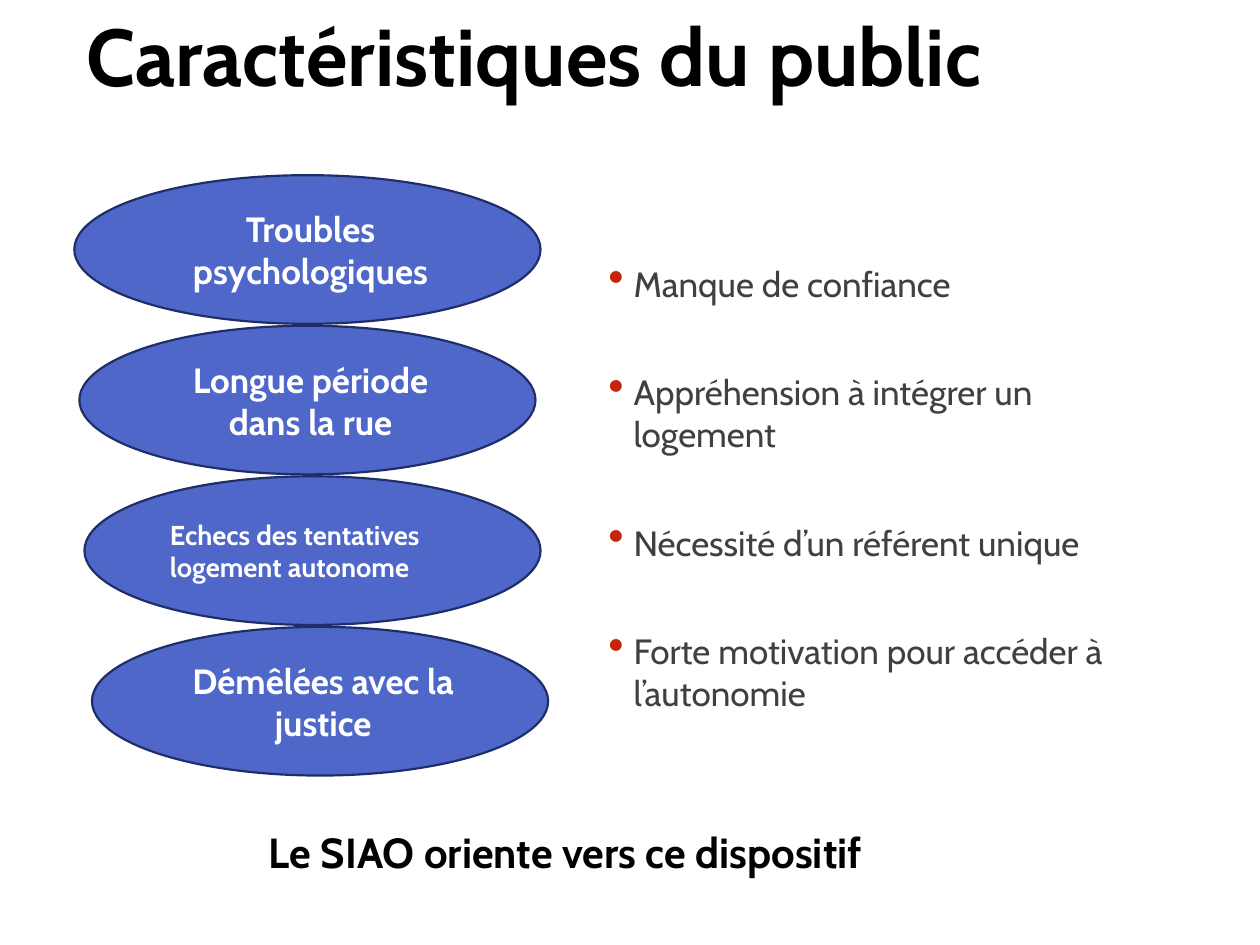
from lxml import etree
from pptx import Presentation
from pptx import util as u
from pptx.dml.color import RGBColor
from pptx.enum import shapes, text
from pptx.oxml.ns import qn

FONT = "Cabin"
DIFFICULTIES = [
    ("Troubles psychologiques", 0.59, 3.7, 20, text.PP_ALIGN.CENTER),
    ("Longue période dans la rue", 0.63, 3.62, 20, text.PP_ALIGN.CENTER),
    ("Echecs des tentatives logement autonome", 0.67, 3.62, 15.6, text.PP_ALIGN.LEFT),
    ("Démêlées avec la justice", 0.73, 3.62, 20, text.PP_ALIGN.CENTER),
]
NEEDS = [
    "Manque de confiance",
    "Appréhension à intégrer un logement",
    "Nécessité d’un référent unique",
    "Forte motivation pour accéder à l’autonomie",
]


def color(hex_value):
    """Turn a hex string into a colour."""
    return RGBColor.from_string(hex_value)


def style(paragraph, size, hex_value, bold=False, align=text.PP_ALIGN.LEFT):
    """Format a paragraph and its runs."""
    paragraph.alignment = align
    for run in paragraph.runs:
        run.font.name = FONT
        run.font.size = u.Pt(size)
        run.font.bold = bold
        run.font.color.rgb = color(hex_value)


def indent(paragraph, left, first=0):
    """Set the left margin and first-line indent in inches."""
    properties = paragraph._p.get_or_add_pPr()
    properties.set("marL", str(u.Inches(left)))
    properties.set("indent", str(u.Inches(first)))
    return properties


def add_text(slide, left, top, width, height):
    """Add a wrapping text box and return its frame."""
    frame = slide.shapes.add_textbox(
        u.Inches(left), u.Inches(top), u.Inches(width), u.Inches(height)).text_frame
    frame.word_wrap = True
    return frame


def add_heading(slide, wording, box, size, align):
    """Add one bold black line of text."""
    heading = add_text(slide, *box).paragraphs[0]
    heading.text = wording
    style(heading, size, "000000", True, align)


def add_bullet(paragraph):
    """Give a paragraph a large red bullet."""
    properties = indent(paragraph, 0.6, -0.2)
    bullet_color = etree.SubElement(properties, qn("a:buClr"))
    etree.SubElement(bullet_color, qn("a:srgbClr"), val="C3260C")
    etree.SubElement(properties, qn("a:buSzPct"), val="130000")
    etree.SubElement(properties, qn("a:buChar"), char="•")


def add_needs(slide):
    """Add the bulleted list of needs."""
    frame = add_text(slide, 4.33, 1.58, 5, 4.8)
    frame.margin_top = u.Inches(0.5)
    for index, wording in enumerate(NEEDS):
        need = frame.paragraphs[0] if index == 0 else frame.add_paragraph()
        need.text = wording
        need.space_before = u.Pt(35 if index else 0)
        need.space_after = u.Pt(3)
        style(need, 20, "404040")
        add_bullet(need)


def add_difficulty(slide, top, wording, left, width, size, align):
    """Add one labelled ellipse."""
    ellipse = slide.shapes.add_shape(
        shapes.MSO_SHAPE.OVAL, u.Inches(left), u.Inches(top), u.Inches(width), u.Inches(1.18))
    ellipse.shadow.inherit = False
    ellipse.fill.solid()
    ellipse.fill.fore_color.rgb = color("4E67C8")
    ellipse.line.color.rgb = color("1F2E69")
    ellipse.line.width = u.Pt(1.25)
    frame = ellipse.text_frame
    frame.word_wrap = True
    frame.vertical_anchor = text.MSO_ANCHOR.MIDDLE
    label = frame.paragraphs[0]
    label.text = wording
    style(label, size, "FFFFFF", True, align)
    indent(label, 0.05)


def main():
    """Build and save the slide."""
    deck = Presentation()
    deck.slide_width, deck.slide_height = u.Inches(10), u.Inches(7.5)
    slide = deck.slides.add_slide(deck.slide_layouts[6])
    add_heading(slide, "Caractéristiques du public", (0.59, 0, 8.26, 0.99), 46,
                text.PP_ALIGN.LEFT)
    add_needs(slide)
    for index, difficulty in enumerate(DIFFICULTIES):
        add_difficulty(slide, 1.39 + 1.195 * index, *difficulty)
    add_heading(slide, " Le SIAO oriente vers ce dispositif", (0.67, 6.51, 7.56, 0.5), 24,
                text.PP_ALIGN.CENTER)
    deck.save("out.pptx")


if __name__ == "__main__":
    main()
